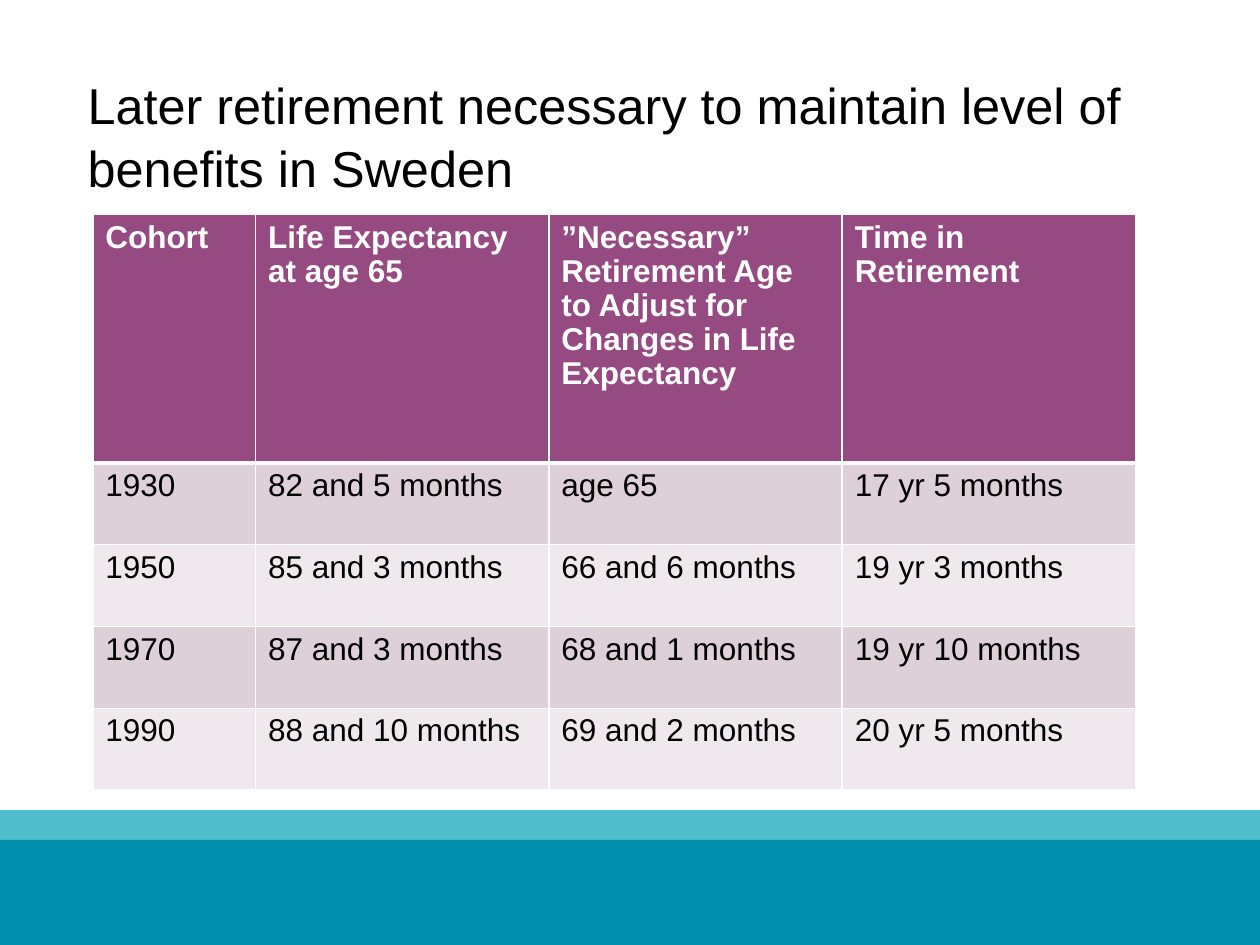
from lxml.etree import SubElement
from pptx import Presentation
from pptx.dml.color import RGBColor
from pptx.enum.shapes import MSO_SHAPE
from pptx.enum.text import MSO_ANCHOR
from pptx.oxml.ns import qn
from pptx.util import Pt

COLORS = {
    "teal": "0090AE",
    "light_teal": "50BDCB",
    "header": "954A81",
    "odd_row": "DDD0D8",
    "even_row": "EFE9ED",
    "white": "FFFFFF",
    "black": "000000",
}
FONT = "Arial"

COHORT_ROWS = [
    ("Cohort", "Life Expectancy at age 65",
     "”Necessary” Retirement Age to Adjust for Changes in Life Expectancy",
     "Time in Retirement"),
    ("1930", "82 and 5 months", "age 65", "17 yr 5 months"),
    ("1950", "85 and 3 months", "66 and 6 months", "19 yr 3 months"),
    ("1970", "87 and 3 months", "68 and 1 months", "19 yr 10 months"),
    ("1990", "88 and 10 months", "69 and 2 months", "20 yr 5 months"),
]


def rgb(name):
    return RGBColor.from_string(COLORS[name])


def write(frame, text, size, color, line_spacing, bold=False):
    paragraph = frame.paragraphs[0]
    paragraph.line_spacing = line_spacing
    run = paragraph.add_run()
    run.text = text
    run.font.name = FONT
    run.font.size = Pt(size)
    run.font.bold = bold
    run.font.color.rgb = rgb(color)


def add_footer(slide, left, top, width, height):
    """Draw a thin light band above a deep one."""
    light_height = 17
    bands = [
        ("light_teal", top, light_height),
        ("teal", top + light_height, height - light_height),
    ]
    for color, band_top, band_height in bands:
        band = slide.shapes.add_shape(
            MSO_SHAPE.RECTANGLE, Pt(left), Pt(band_top), Pt(width), Pt(band_height))
        band.shadow.inherit = False
        band.fill.solid()
        band.fill.fore_color.rgb = rgb(color)
        band.line.fill.background()


def add_title(slide, left, top, width, height):
    title = slide.shapes.add_textbox(Pt(left), Pt(top), Pt(width), Pt(height))
    frame = title.text_frame
    frame.word_wrap = True
    frame.vertical_anchor = MSO_ANCHOR.BOTTOM
    frame.margin_left = frame.margin_right = 0
    frame.margin_top = frame.margin_bottom = 0
    write(frame, "Later retirement necessary to maintain level of benefits in Sweden",
          28.8, "black", 1.05)


def set_borders(cell, widths):
    """Draw white borders; widths maps each side's tag to points."""
    properties = cell._tc.get_or_add_tcPr()
    for position, (side, width) in enumerate(widths.items()):
        line = SubElement(properties, qn(f"a:{side}"), w=str(Pt(width)))
        fill = SubElement(line, qn("a:solidFill"))
        SubElement(fill, qn("a:srgbClr"), val=COLORS["white"])
        properties.insert(position, line)


def add_cohort_table(slide, left, top, width, height):
    cohort_width, header_height = 93, 142
    column_count, row_count = len(COHORT_ROWS[0]), len(COHORT_ROWS)
    table = slide.shapes.add_table(
        row_count, column_count, Pt(left), Pt(top), Pt(width), Pt(height)).table
    for index, column in enumerate(table.columns):
        column.width = Pt(
            (width - cohort_width) / (column_count - 1) if index else cohort_width)
    for index, row in enumerate(table.rows):
        row.height = Pt(
            (height - header_height) / (row_count - 1) if index else header_height)

    for row_index, values in enumerate(COHORT_ROWS):
        is_header = row_index == 0
        if is_header:
            fill = "header"
        else:
            fill = "odd_row" if row_index % 2 else "even_row"
        borders = {
            "lnL": 1,
            "lnR": 1,
            "lnT": 3 if row_index == 1 else 1,
            "lnB": 3 if is_header else 1,
        }
        for column_index, value in enumerate(values):
            cell = table.cell(row_index, column_index)
            cell.fill.solid()
            cell.fill.fore_color.rgb = rgb(fill)
            set_borders(cell, borders)
            write(cell.text_frame, value, 18,
                  "white" if is_header else "black", 0.97, bold=is_header)


def main():
    presentation = Presentation()
    presentation.slide_width = Pt(720)
    presentation.slide_height = Pt(540)
    slide = presentation.slides.add_slide(presentation.slide_layouts[6])
    add_footer(slide, 0, 463, 720, 77)
    add_title(slide, 50, 43, 627, 70)
    add_cohort_table(slide, 53, 122.5, 596, 329)
    presentation.save("out.pptx")


if __name__ == "__main__":
    main()
